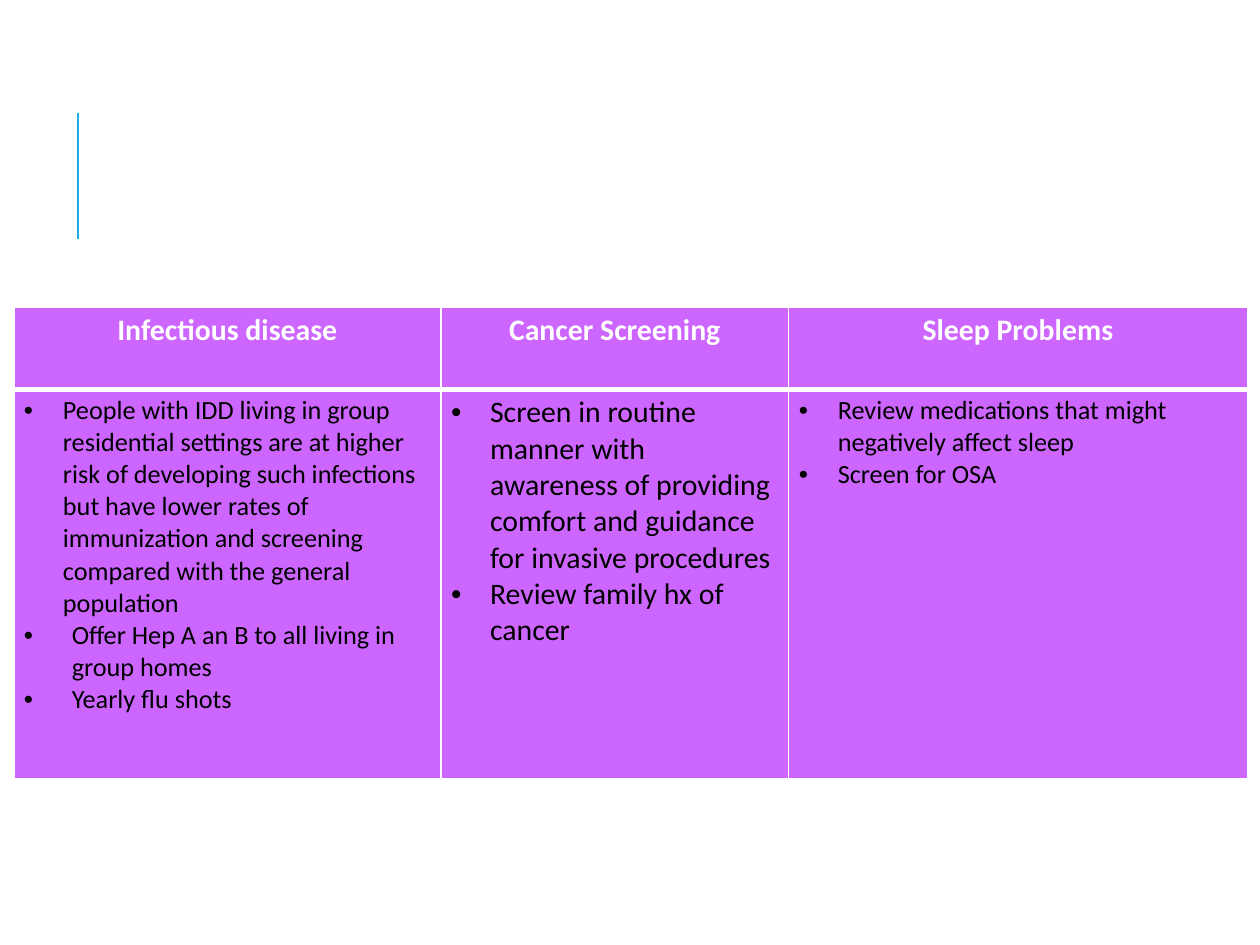
from lxml import etree
from pptx import Presentation
from pptx.dml.color import RGBColor
from pptx.enum.shapes import MSO_CONNECTOR
from pptx.enum.text import PP_ALIGN
from pptx.oxml.ns import qn
from pptx.util import Inches, Pt

STRAIGHT = MSO_CONNECTOR.STRAIGHT
CENTER = PP_ALIGN.CENTER
WHITE = RGBColor(0xFF, 0xFF, 0xFF)
BLACK = RGBColor(0, 0, 0)
PURPLE = RGBColor(0xCC, 0x66, 0xFF)
BLUE = RGBColor(0x1C, 0xAD, 0xE4)

TOPICS = [
    {"title": "Infectious disease", "width": 3.39, "size": 15, "items": [
        ("People with IDD living in group residential settings are at higher risk of "
         "developing such infections but have lower rates of immunization and "
         "screening compared with the general population", 0.31),
        ("Offer Hep A an B to all living in group homes", 0.38),
        ("Yearly flu shots", 0.38)]},
    {"title": "Cancer Screening", "width": 2.76, "size": 17, "items": [
        ("Screen in routine manner with awareness of providing comfort and "
         "guidance for invasive procedures", 0.31),
        ("Review family hx of cancer", 0.31)]},
    {"title": "Sleep Problems", "width": 3.64, "size": 15, "items": [
        ("Review medications that might negatively affect sleep", 0.31),
        ("Screen for OSA", 0.31)]},
]
ROW_HEIGHTS = (0.65, 3.09)
TABLE_LEFT, TABLE_TOP = 0.11, 2.44
HEADER_BORDERS = {"lnL": 1, "lnR": 1, "lnT": 1, "lnB": 3}
BODY_BORDERS = {"lnL": 1, "lnR": 1, "lnT": 3, "lnB": 1}
MARGINS = {"margin_left": 0.08, "margin_right": 0.08,
           "margin_top": 0.04, "margin_bottom": 0.04}
HEADER_FONT = {"name": "Calibri", "size": Pt(17), "bold": True}


def format_cell(cell, borders):
    for name, value in MARGINS.items():
        setattr(cell, name, Inches(value))
    cell.fill.solid()
    cell.fill.fore_color.rgb = PURPLE
    properties = cell._tc.get_or_add_tcPr()
    for position, (tag, width) in enumerate(borders.items()):
        border = etree.Element(qn("a:" + tag), w=str(Pt(width)))
        fill = etree.SubElement(border, qn("a:solidFill"))
        etree.SubElement(fill, qn("a:srgbClr"), val=str(WHITE))
        properties.insert(position, border)


def write(paragraph, text, font, color):
    run = paragraph.add_run()
    run.text = text
    for name, value in font.items():
        setattr(run.font, name, value)
    run.font.color.rgb = color


def add_bullet(paragraph, indent):
    properties = paragraph._p.get_or_add_pPr()
    properties.set("marL", str(Inches(indent)))
    properties.set("indent", str(-Inches(indent)))
    etree.SubElement(properties, qn("a:buFont"), typeface="Arial")
    etree.SubElement(properties, qn("a:buChar"), char="•")


def add_accent_line(slide):
    line = slide.shapes.add_connector(
        STRAIGHT, Inches(0.62), Inches(1.9), Inches(0.62), Inches(0.9))
    line.line.color.rgb = BLUE
    line.line.width = Pt(1.5)
    etree.SubElement(line._element.spPr, qn("a:effectLst"))


def add_topic_table(slide):
    width = sum(topic["width"] for topic in TOPICS)
    table = slide.shapes.add_table(
        len(ROW_HEIGHTS), len(TOPICS), Inches(TABLE_LEFT), Inches(TABLE_TOP),
        Inches(width), Inches(sum(ROW_HEIGHTS))).table
    for row, height in zip(table.rows, ROW_HEIGHTS):
        row.height = Inches(height)
    for index, topic in enumerate(TOPICS):
        table.columns[index].width = Inches(topic["width"])
        header, body = table.cell(0, index), table.cell(1, index)
        format_cell(header, HEADER_BORDERS)
        format_cell(body, BODY_BORDERS)
        title = header.text_frame.paragraphs[0]
        title.alignment = CENTER
        write(title, topic["title"], HEADER_FONT, WHITE)
        body_font = {"name": "Calibri", "size": Pt(topic["size"]), "bold": False}
        frame = body.text_frame
        for number, (text, indent) in enumerate(topic["items"]):
            paragraph = frame.add_paragraph() if number else frame.paragraphs[0]
            add_bullet(paragraph, indent)
            write(paragraph, text, body_font, BLACK)


def main():
    presentation = Presentation()
    presentation.slide_width = Inches(10)
    presentation.slide_height = Inches(7.5)
    slide = presentation.slides.add_slide(presentation.slide_layouts[6])
    add_accent_line(slide)
    add_topic_table(slide)
    presentation.save("out.pptx")


if __name__ == "__main__":
    main()
